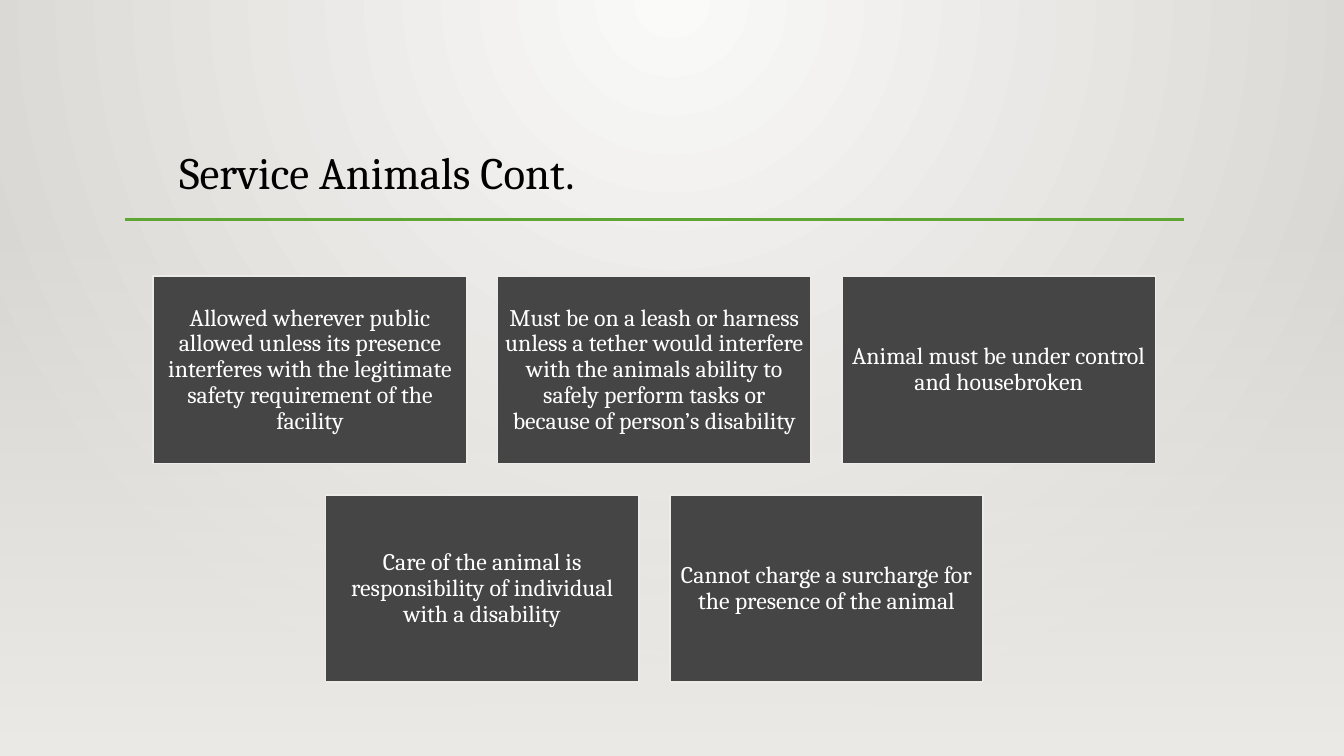
"""Build the slide on rules for service animals."""
from lxml.etree import SubElement
from pptx import Presentation
from pptx.dml.color import RGBColor as Rgb
from pptx.enum.shapes import MSO_CONNECTOR as Connector, MSO_SHAPE as Shape
from pptx.enum.text import MSO_ANCHOR as Anchor, PP_ALIGN as Align
from pptx.oxml.ns import qn
from pptx.util import Inches, Pt

TITLE = "Service Animals Cont."
RULE_ROWS = [
    [
        "Allowed wherever public allowed unless its presence interferes with "
        "the legitimate safety requirement of the facility",
        "Must be on a leash or harness unless a tether would interfere with the "
        "animals ability to safely perform tasks or because of person’s disability",
        "Animal must be under control and housebroken",
    ],
    [
        "Care of the animal is responsibility of individual with a disability",
        "Cannot charge a surcharge for the presence of the animal",
    ],
]

THEME = {
    "backdrop": ("FAFAF9", "D7D5D2"),
    "floor": "EDEBE7",
    "accent": "5FA534",
    "card": "454545",
    "card_text": {"name": "Cambria", "size": Pt(17), "color": "FFFFFF"},
    "title_text": {"name": "Cambria", "size": Pt(32), "color": "000000"},
}
SLIDE_W, SLIDE_H = 13.33, 7.5
CARD_W, CARD_H = 3.11, 1.86
STEP_X, STEP_Y = 3.415, 2.17
CARDS_TOP, CARDS_CENTER = 2.74, 6.49
RULE_LEFT, RULE_RIGHT, RULE_Y = 1.24, 11.74, 2.18
FLOOR_TOP = 2.21
CARD_FRAME = {
    "word_wrap": True, "vertical_anchor": Anchor.MIDDLE,
    **{f"margin_{side}": Inches(0.07) for side in ("left", "top", "right", "bottom")},
}
TITLE_FRAME = {"word_wrap": True, "vertical_anchor": Anchor.BOTTOM}


def assign(target, values):
    for name, value in values.items():
        setattr(target, name, value)


def write(frame, text, frame_format, text_format, align):
    assign(frame, frame_format)
    paragraph = frame.paragraphs[0]
    paragraph.text = text
    assign(paragraph, {"alignment": align, "line_spacing": 0.9})
    font_format = dict(text_format)
    paragraph.font.color.rgb = Rgb.from_string(font_format.pop("color"))
    assign(paragraph.font, font_format)


def blend(fill, colors):
    fill.gradient()
    for stop, color in zip(fill.gradient_stops, colors):
        stop.color.rgb = Rgb.from_string(color)


def paint_backdrop(slide):
    fill = slide.background.fill
    blend(fill, THEME["backdrop"])
    gradient = slide.element.find(".//" + qn("a:gradFill"))
    gradient.remove(gradient.find(qn("a:lin")))
    glow = SubElement(gradient, qn("a:path"), path="circle")
    SubElement(glow, qn("a:fillToRect"), l="43000", t="0", r="43000", b="100000")


def add_block(slide, left, top, width, height):
    block = slide.shapes.add_shape(Shape.RECTANGLE, *map(Inches, (left, top, width, height)))
    block.shadow.inherit = False
    return block


def add_floor(slide):
    floor = add_block(slide, 0, FLOOR_TOP, SLIDE_W, SLIDE_H - FLOOR_TOP)
    floor.line.fill.background()
    blend(floor.fill, (THEME["floor"], THEME["floor"]))
    floor.fill.gradient_angle = 270
    SubElement(floor.element.find(".//" + qn("a:srgbClr")), qn("a:alpha"), val="0")


def add_heading(slide):
    heading = slide.shapes.add_textbox(*map(Inches, (1.68, 0.88, 10.41, 1.15)))
    write(heading.text_frame, TITLE, TITLE_FRAME, THEME["title_text"], Align.LEFT)
    rule = slide.shapes.add_connector(
        Connector.STRAIGHT, *map(Inches, (RULE_LEFT, RULE_Y, RULE_RIGHT, RULE_Y)))
    rule.line.color.rgb = Rgb.from_string(THEME["accent"])
    rule.line.width = Pt(2.5)
    SubElement(rule.element.spPr, qn("a:effectLst"))


def add_cards(slide):
    for row, texts in enumerate(RULE_ROWS):
        row_left = CARDS_CENTER - ((len(texts) - 1) * STEP_X + CARD_W) / 2
        for column, text in enumerate(texts):
            card = add_block(slide, row_left + column * STEP_X,
                             CARDS_TOP + row * STEP_Y, CARD_W, CARD_H)
            card.fill.solid()
            card.fill.fore_color.rgb = Rgb.from_string(THEME["card"])
            card.line.color.rgb = Rgb.from_string(THEME["floor"])
            card.line.width = Pt(1.25)
            write(card.text_frame, text, CARD_FRAME, THEME["card_text"], Align.CENTER)


def main():
    deck = Presentation()
    assign(deck, {"slide_width": Inches(SLIDE_W), "slide_height": Inches(SLIDE_H)})
    slide = deck.slides.add_slide(deck.slide_layouts[6])
    paint_backdrop(slide)
    add_floor(slide)
    add_heading(slide)
    add_cards(slide)
    deck.save("out.pptx")


if __name__ == "__main__":
    main()
